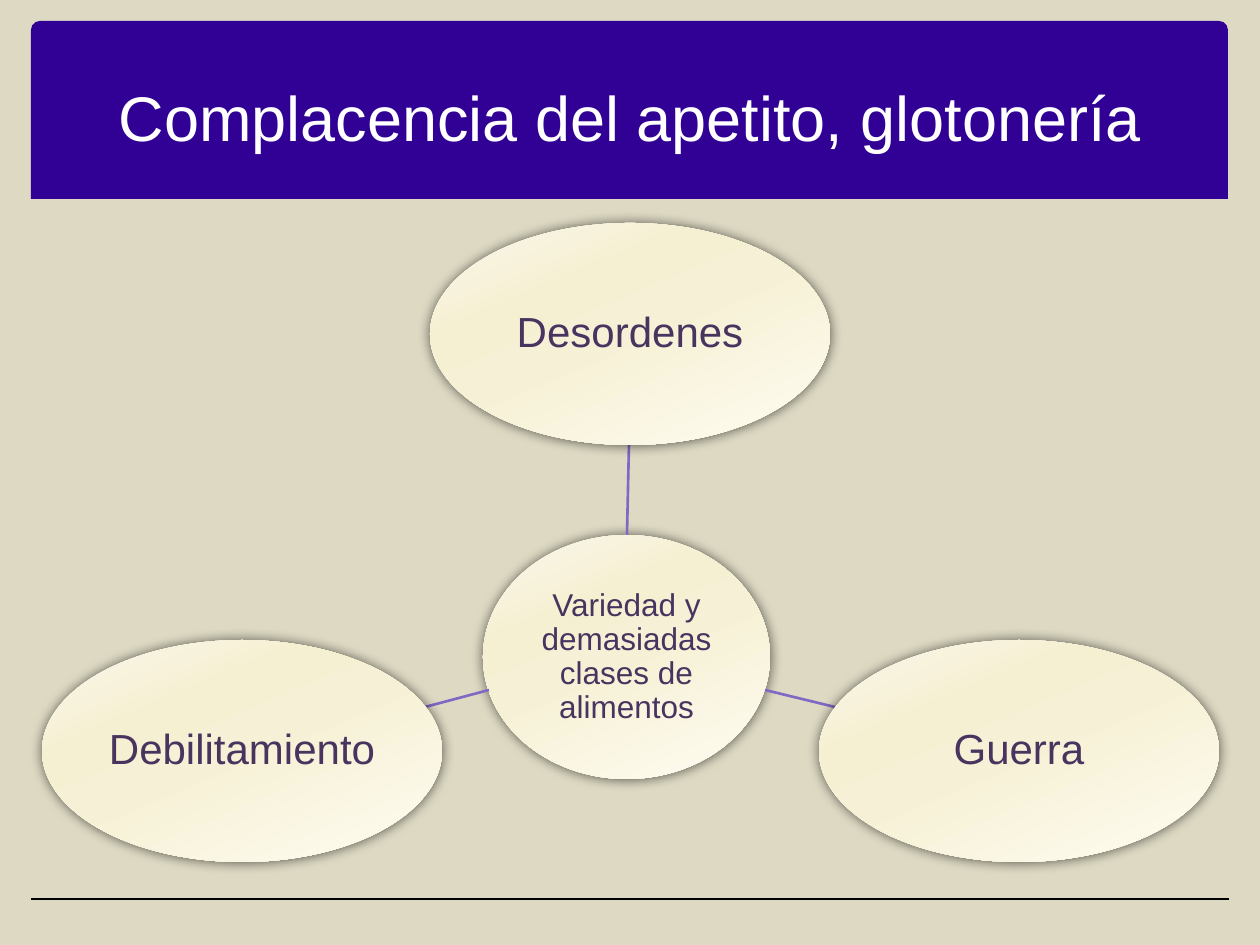
from lxml import etree
from pptx import Presentation
from pptx import util as u
from pptx.dml.color import RGBColor
from pptx.enum import shapes, text
from pptx.oxml import parse_xml
from pptx.oxml.ns import nsdecls, qn

PX = 914400 / 126
FONT = "Arial"
BACKGROUND, BANNER, WHITE, BLACK = "DDD9C3", "310095", "FFFFFF", "000000"
LABEL, LINK = "49345F", "8068C4"
CREAM_STOPS = [(0, "F9F7EC"), (30, "F6F0D3"), (50, "F6F1D6"), (100, "FEFCF2")]
CREAM_ANGLE = 67

NODE_SIZE = (400, 222)
NODES = [
    ("Desordenes", 430, 223),
    ("Guerra", 819, 640),
    ("Debilitamiento", 42, 640),
]
LINKS = [
    (627, 535, 629, 445),
    (765, 690, 835, 707),
    (489, 690, 425, 707),
]


def px(length):
    return u.Emu(round(length * PX))


def color(value):
    return RGBColor.from_string(value)


def add_preset(slide, kind, left, top, width, height):
    shape = slide.shapes.add_shape(kind, px(left), px(top), px(width), px(height))
    shape.shadow.inherit = False
    shape.line.fill.background()
    return shape


def write(shape, words, size, font_color, inset, line_spacing=1.0):
    """Set one centred paragraph in the middle of the shape."""
    frame = shape.text_frame
    frame.word_wrap = True
    frame.vertical_anchor = text.MSO_ANCHOR.MIDDLE
    frame.margin_left = frame.margin_right = px(inset)
    frame.margin_top = frame.margin_bottom = px(inset)
    paragraph = frame.paragraphs[0]
    paragraph.alignment = text.PP_ALIGN.CENTER
    paragraph.line_spacing = line_spacing
    run = paragraph.add_run()
    run.text = words
    run.font.name = FONT
    run.font.size = u.Pt(size)
    run.font.color.rgb = color(font_color)


def add_line(slide, x1, y1, x2, y2, line_color, width):
    line = slide.shapes.add_connector(
        shapes.MSO_CONNECTOR.STRAIGHT, px(x1), px(y1), px(x2), px(y2))
    line.line.color.rgb = color(line_color)
    line.line.width = u.Pt(width)
    etree.SubElement(line._element.spPr, qn("a:effectLst"))


def fill_cream(shape):
    """Fill with the cream gradient, which python-pptx cannot build with four stops."""
    stops = "".join(
        f'<a:gs pos="{position * 1000}"><a:srgbClr val="{value}"/></a:gs>'
        for position, value in CREAM_STOPS)
    gradient = parse_xml(
        f'<a:gradFill {nsdecls("a")} rotWithShape="1"><a:gsLst>{stops}</a:gsLst>'
        f'<a:lin ang="{CREAM_ANGLE * 60000}" scaled="0"/></a:gradFill>')
    shape._element.spPr.find(qn("a:prstGeom")).addnext(gradient)


def add_glow_shadow(shape):
    effects = shape._element.spPr.find(qn("a:effectLst"))
    effects.append(parse_xml(
        f'<a:outerShdw {nsdecls("a")} blurRad="{u.Pt(7.1)}" dist="0" dir="0" '
        f'algn="ctr" rotWithShape="0"><a:srgbClr val="{BLACK}">'
        '<a:alpha val="60000"/></a:srgbClr></a:outerShdw>'))


def add_bubble(slide, words, left, top, width, height, size):
    bubble = add_preset(slide, shapes.MSO_SHAPE.OVAL, left, top, width, height)
    fill_cream(bubble)
    add_glow_shadow(bubble)
    write(bubble, words, size, LABEL, inset=2, line_spacing=0.9)


def add_banner(slide, title):
    banner = add_preset(
        slide, shapes.MSO_SHAPE.ROUND_2_SAME_RECTANGLE, 31, 21, 1197, 178)
    banner.adjustments[0] = 0.05
    banner.adjustments[1] = 0
    banner.fill.solid()
    banner.fill.fore_color.rgb = color(BANNER)
    box = slide.shapes.add_textbox(px(42), px(38), px(1176), px(157))
    write(box, title, 36, WHITE, inset=6)


def main():
    presentation = Presentation()
    presentation.slide_width, presentation.slide_height = px(1260), px(945)
    slide = presentation.slides.add_slide(presentation.slide_layouts[6])
    slide.background.fill.solid()
    slide.background.fill.fore_color.rgb = color(BACKGROUND)

    add_banner(slide, "Complacencia del apetito, glotonería")
    add_line(slide, 31, 899, 1229, 899, BLACK, 1)
    add_bubble(slide, "Variedad y demasiadas clases de alimentos",
               483, 535, 287, 244, 18)
    for ends, (words, left, top) in zip(LINKS, NODES):
        add_line(slide, *ends, LINK, 1.5)
        add_bubble(slide, words, left, top, *NODE_SIZE, 24)
    presentation.save("out.pptx")


if __name__ == "__main__":
    main()
